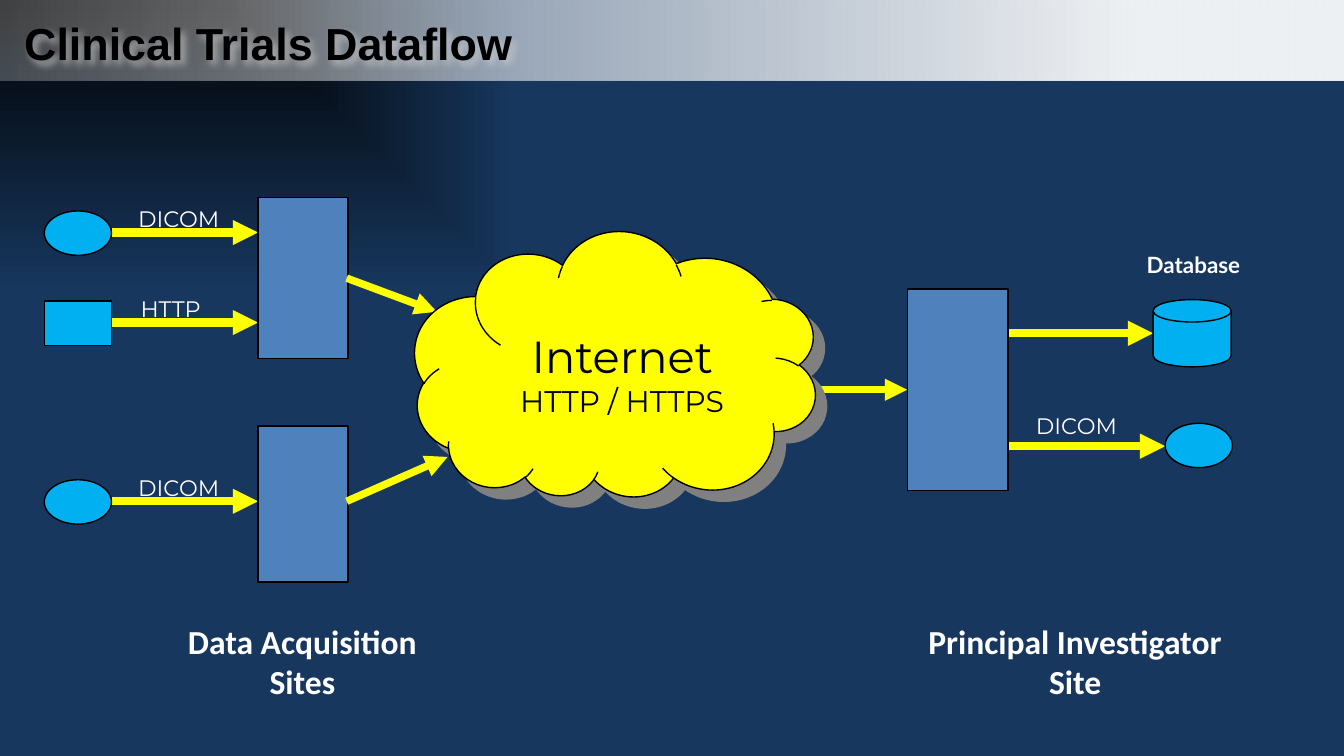
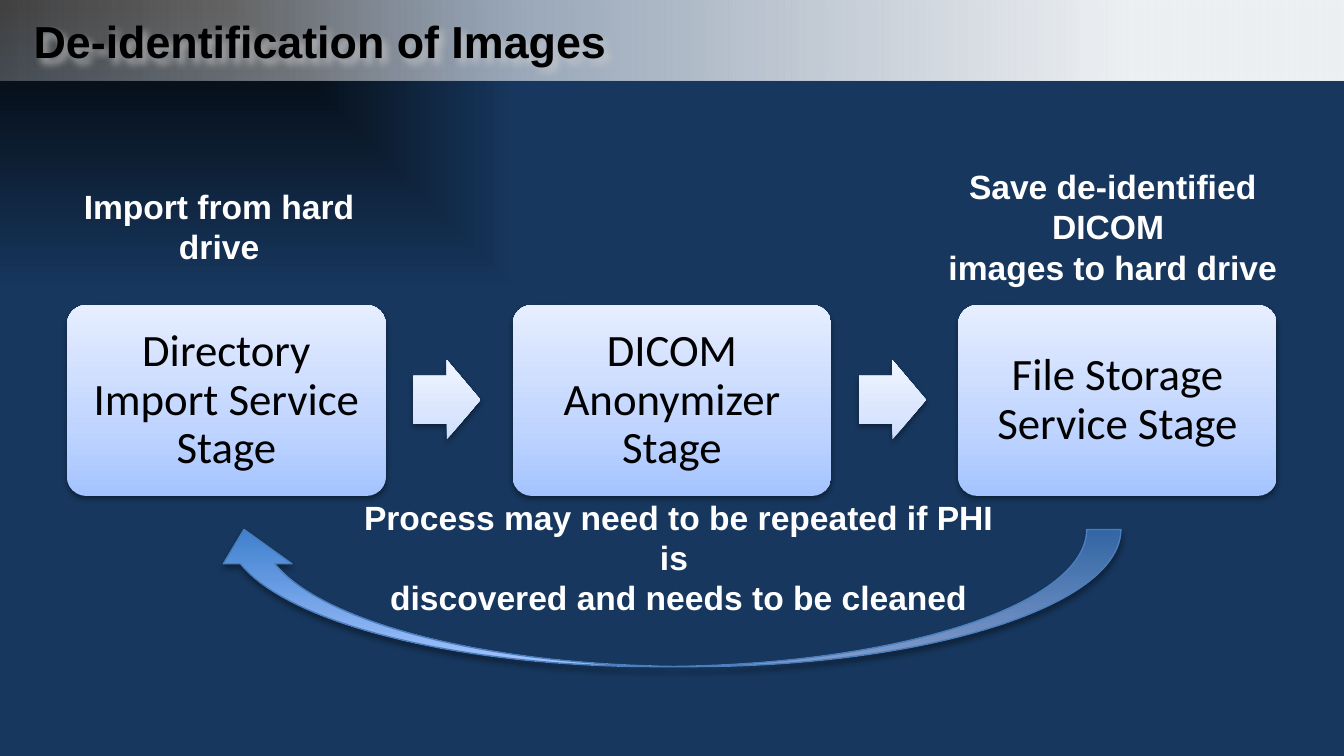
from lxml.etree import SubElement
from pptx import Presentation
from pptx.dml.color import RGBColor
from pptx.enum.shapes import MSO_CONNECTOR, MSO_SHAPE as SHAPE
from pptx.enum.text import MSO_ANCHOR as ANCHOR, MSO_AUTO_SIZE, PP_ALIGN as ALIGN
from pptx.oxml.ns import qn
from pptx.util import Inches, Pt

BLACK = RGBColor(0, 0, 0)
WHITE = RGBColor(255, 255, 255)
NAVY = RGBColor(0x17, 0x37, 0x5E)
YELLOW = RGBColor(255, 255, 0)
CYAN = RGBColor(0, 0xB0, 0xF0)
STEEL = RGBColor(0x4F, 0x81, 0xBD)
GRAY = RGBColor(0x80, 0x80, 0x80)
SILVER = RGBColor(0xD0, 0xD0, 0xD0)
EDGE = RGBColor(0x4B, 0x7E, 0xBC)
SKY = RGBColor(0xA4, 0xC4, 0xFF)

BAND = [(0, WHITE, 25), (84, WHITE, 92)]
BACKDROP = [(0, BLACK, 100), (77, NAVY, 100)]
STAGE_FILL = [(0, SKY, 100), (35, RGBColor(0xBF, 0xD4, 0xFF), 100),
              (100, RGBColor(0xE6, 0xEE, 0xFF), 100)]
ARROW_FILL = [(0, RGBColor(0xCD, 0xDD, 0xFE), 100), (35, RGBColor(0xDB, 0xE6, 0xFE), 100),
              (100, RGBColor(0xF0, 0xF5, 0xFF), 100)]
LOOP_FILL = [(0, RGBColor(0x3F, 0x80, 0xCE), 100), (100, SKY, 100)]

TITLE = {"name": "Arial", "size": Pt(24), "bold": True, "color": BLACK}
PROTOCOL = {"name": "Montserrat", "size": Pt(12), "color": WHITE}
CLOUD_NAME = {"name": "Montserrat", "size": Pt(24), "color": BLACK}
CLOUD_NOTE = {**CLOUD_NAME, "size": Pt(16)}
DATABASE = {"name": "Lato", "size": Pt(12), "bold": True, "color": WHITE}
SITE = {"name": "Calibri", "size": Pt(18), "bold": True, "color": WHITE}
STAGE = {"name": "Calibri", "size": Pt(24), "color": BLACK}
NOTE = {"name": "Arial", "size": Pt(18), "bold": True, "color": WHITE}
SOFT_SHADOW = {"color": BLACK, "alpha": 38, "blur": 3.1, "distance": 1.6, "angle": 90}


def inches(box):
    """Convert numbers to lengths."""
    return [Inches(value) for value in box]


def add_color(parent, color, alpha):
    """Append a colour with opacity in percent."""
    node = SubElement(parent, qn("a:srgbClr"), val=str(color))
    if alpha < 100:
        SubElement(node, qn("a:alpha"), val=str(alpha * 1000))


def set_gradient(fill, properties, stops, angle=None):
    """Fill with a linear gradient, or one from the top left corner without angle."""
    fill.solid()
    solid = properties.find(qn("a:solidFill"))
    gradient = SubElement(properties, qn("a:gradFill"), rotWithShape="1")
    stop_list = SubElement(gradient, qn("a:gsLst"))
    for position, color, alpha in stops:
        add_color(SubElement(stop_list, qn("a:gs"), pos=str(position * 1000)), color, alpha)
    if angle is None:
        corner = SubElement(gradient, qn("a:path"), path="rect")
        SubElement(corner, qn("a:fillToRect"), r="100000", b="100000")
    else:
        SubElement(gradient, qn("a:lin"), ang=str(angle * 60000), scaled="0")
    properties.replace(solid, gradient)


def set_shadow(shape, color, alpha, blur, distance, angle):
    """Give a shape an outer shadow."""
    shape.shadow.inherit = False
    effects = shape.element.spPr.find(qn("a:effectLst"))
    outer = SubElement(effects, qn("a:outerShdw"), blurRad=str(Pt(blur)), dist=str(Pt(distance)),
                       dir=str(angle * 60000), algn="ctr", rotWithShape="0")
    add_color(outer, color, alpha)


def write(frame, lines, anchor, align=ALIGN.CENTER, wrap=True):
    """Write (text, format) lines, one paragraph each."""
    frame.word_wrap = wrap
    frame.auto_size = MSO_AUTO_SIZE.NONE
    frame.vertical_anchor = anchor
    for index, (text, style) in enumerate(lines):
        paragraph = frame.add_paragraph() if index else frame.paragraphs[0]
        paragraph.alignment = align
        run = paragraph.add_run()
        run.text = text
        for name, value in style.items():
            if name == "color":
                run.font.color.rgb = value
            else:
                setattr(run.font, name, value)


def add_label(slide, box, lines, style, anchor=ANCHOR.TOP, wrap=False):
    """Add a centred text box with lines in one style."""
    frame = slide.shapes.add_textbox(*inches(box)).text_frame
    write(frame, [(line, style) for line in lines], anchor, wrap=wrap)


def add_box(slide, kind, box, fill, line=BLACK, angle=270):
    """Add a shape with a plain colour or gradient stops."""
    shape = slide.shapes.add_shape(kind, *inches(box))
    shape.shadow.inherit = False
    if isinstance(fill, list):
        set_gradient(shape.fill, shape.element.spPr, fill, angle)
    else:
        shape.fill.solid()
        shape.fill.fore_color.rgb = fill
    if line is None:
        shape.line.fill.background()
    else:
        shape.line.color.rgb = line
        shape.line.width = Pt(0.75)
    return shape


def add_arrow(slide, start, end, width=4.5):
    """Add a yellow arrow."""
    arrow = slide.shapes.add_connector(MSO_CONNECTOR.STRAIGHT, *inches(start + end))
    arrow.line.color.rgb = YELLOW
    arrow.line.width = Pt(width)
    properties = arrow.element.spPr
    SubElement(properties.find(qn("a:ln")), qn("a:tailEnd"), type="triangle")
    SubElement(properties, qn("a:effectLst"))


def set_master(presentation, slide):
    """Put the backdrop and the title band on the master."""
    master = presentation.slide_master
    fill = master.background.fill
    fill.solid()
    set_gradient(fill, master.element.find(".//" + qn("p:bgPr")), BACKDROP)
    band = add_box(slide, SHAPE.RECTANGLE, (0, 0, 10, 0.6), BAND, None, 0)
    master.shapes[0].element.addprevious(band.element)


def add_titled_slide(presentation, text, box):
    """Add a title-only slide and format its title."""
    slide = presentation.slides.add_slide(presentation.slide_layouts[5])
    title = slide.shapes.title
    title.left, title.top, title.width, title.height = inches(box)
    write(title.text_frame, [(text, TITLE)], ANCHOR.MIDDLE, ALIGN.LEFT)
    set_shadow(title, SILVER, 70, 4, 3, 45)
    return slide


def add_acquisition_sites(slide, left, top):
    """Draw the sources, their protocols and the two site boxes."""
    sources = [(SHAPE.OVAL, "DICOM", 0.26, 0.82), (SHAPE.RECTANGLE, "HTTP", 0.93, 0.7),
               (SHAPE.OVAL, "DICOM", 2.26, 0.82)]
    for kind, protocol, offset, width in sources:
        middle = top + offset
        add_arrow(slide, (left + 0.5, middle), (left + 1.59, middle))
        add_label(slide, (left + 0.59, middle - 0.25, width, 0.3), [protocol], PROTOCOL)
        add_box(slide, kind, (left, middle - 0.16, 0.5, 0.33), CYAN)
    for offset, height in ((0, 1.2), (1.7, 1.16)):
        add_box(slide, SHAPE.RECTANGLE, (left + 1.59, top + offset, 0.67, height), STEEL)
    add_label(slide, (left + 0.96, top + 3.1, 1.92, 0.71), ["Data Acquisition", "Sites"], SITE)


def add_internet(slide, left, top):
    """Draw the cloud with the arrows that reach and leave it."""
    for start, end in (((-0.5, 0.34), (0.17, 0.59)), ((-0.5, 2), (0.25, 1.67)),
                       ((3, 1.17), (3.67, 1.17))):
        add_arrow(slide, (left + start[0], top + start[1]), (left + end[0], top + end[1]), 4)
    cloud = add_box(slide, SHAPE.CLOUD, (left, top, 3, 2.01), YELLOW)
    cloud.rotation = 186.9
    set_shadow(cloud, GRAY, 100, 0, 8.5, 45)
    frame = slide.shapes.add_textbox(*inches((left + 0.6, top + 0.67, 1.9, 0.77))).text_frame
    write(frame, [("Internet", CLOUD_NAME), ("HTTP / HTTPS", CLOUD_NOTE)], ANCHOR.TOP, wrap=False)


def add_investigator_site(slide, left, top):
    """Draw the investigator's box, its database and its DICOM target."""
    add_arrow(slide, (left + 0.67, top + 0.33), (left + 1.83, top + 0.33))
    add_arrow(slide, (left + 0.67, top + 1.17), (left + 1.92, top + 1.17))
    add_box(slide, SHAPE.RECTANGLE, (left, top, 0.75, 1.5), STEEL)
    add_box(slide, SHAPE.FLOWCHART_MAGNETIC_DISK, (left + 1.83, top + 0.08, 0.58, 0.5), CYAN)
    add_box(slide, SHAPE.OVAL, (left + 1.92, top + 1, 0.5, 0.33), CYAN)
    add_label(slide, (left + 1.42, top - 0.33, 1.42, 0.3), ["Database"], DATABASE, wrap=True)
    add_label(slide, (left + 0.85, top + 0.87, 0.82, 0.3), ["DICOM"], PROTOCOL)
    add_label(slide, (left + 0.05, top + 2.42, 2.4, 0.71), ["Principal Investigator", "Site"], SITE)


def add_stages(slide, left, top, width, names):
    """Draw equally spaced stages with block arrows between them."""
    stage_width, height = 2.37, 1.42
    pitch = (width - stage_width) / (len(names) - 1)
    for index, name in enumerate(names):
        x = left + index * pitch
        stage = add_box(slide, SHAPE.ROUNDED_RECTANGLE, (x, top, stage_width, height), STAGE_FILL, None)
        stage.adjustments[0] = 0.1
        set_shadow(stage, **SOFT_SHADOW)
        frame = stage.text_frame
        write(frame, [(name, STAGE)], ANCHOR.MIDDLE)
        frame.paragraphs[0].line_spacing = 0.9
        for side in ("left", "top", "right", "bottom"):
            setattr(frame, "margin_" + side, Inches(0.1))
        if index:
            arrow = add_box(slide, SHAPE.RIGHT_ARROW, (x - 0.74, top + 0.41, 0.5, 0.59), ARROW_FILL, None)
            arrow.adjustments[0] = 0.6
            set_shadow(arrow, **SOFT_SHADOW)


def add_stage_notes(slide, left, top):
    """Write the notes around the stages."""
    notes = [((0, 0.15, 2.68, 0.4), ["Import from hard drive"]),
             ((2.26, 2.46, 5, 0.71), ["Process may need to be repeated if PHI is ",
                                      "discovered and needs to be cleaned"]),
             ((6.39, 0, 3.2, 0.71), ["Save de-identified DICOM ", "images to hard drive"])]
    for (x, y, width, height), lines in notes:
        add_label(slide, (left + x, top + y, width, height), lines, NOTE, ANCHOR.MIDDLE, True)


def add_loop(slide, box):
    """Draw the curved arrow back to the first stage."""
    loop = add_box(slide, SHAPE.CURVED_DOWN_ARROW, box, LOOP_FILL, EDGE)
    loop.rotation = 180
    set_shadow(loop, **{**SOFT_SHADOW, "alpha": 35, "distance": 1.8})


def main():
    """Build both slides and save them."""
    presentation = Presentation()
    presentation.slide_width, presentation.slide_height = inches((10, 10 * 9 / 16))

    dataflow = add_titled_slide(presentation, "Clinical Trials Dataflow", (0.08, 0.06, 7.7, 0.51))
    set_master(presentation, dataflow)
    add_acquisition_sites(dataflow, 0.33, 1.47)
    add_internet(dataflow, 3.08, 1.73)
    add_investigator_site(dataflow, 6.75, 2.15)

    cleaning = add_titled_slide(presentation, "De-identification of Images", (0.15, 0, 6.79, 0.61))
    add_stages(cleaning, 0.5, 2.27, 9, ["Directory Import Service Stage", "DICOM Anonymizer Stage",
                                        "File Storage Service Stage"])
    add_stage_notes(cleaning, 0.29, 1.33)
    add_loop(cleaning, (1.56, 3.94, 6.78, 1.02))

    presentation.save("out.pptx")


if __name__ == "__main__":
    main()
